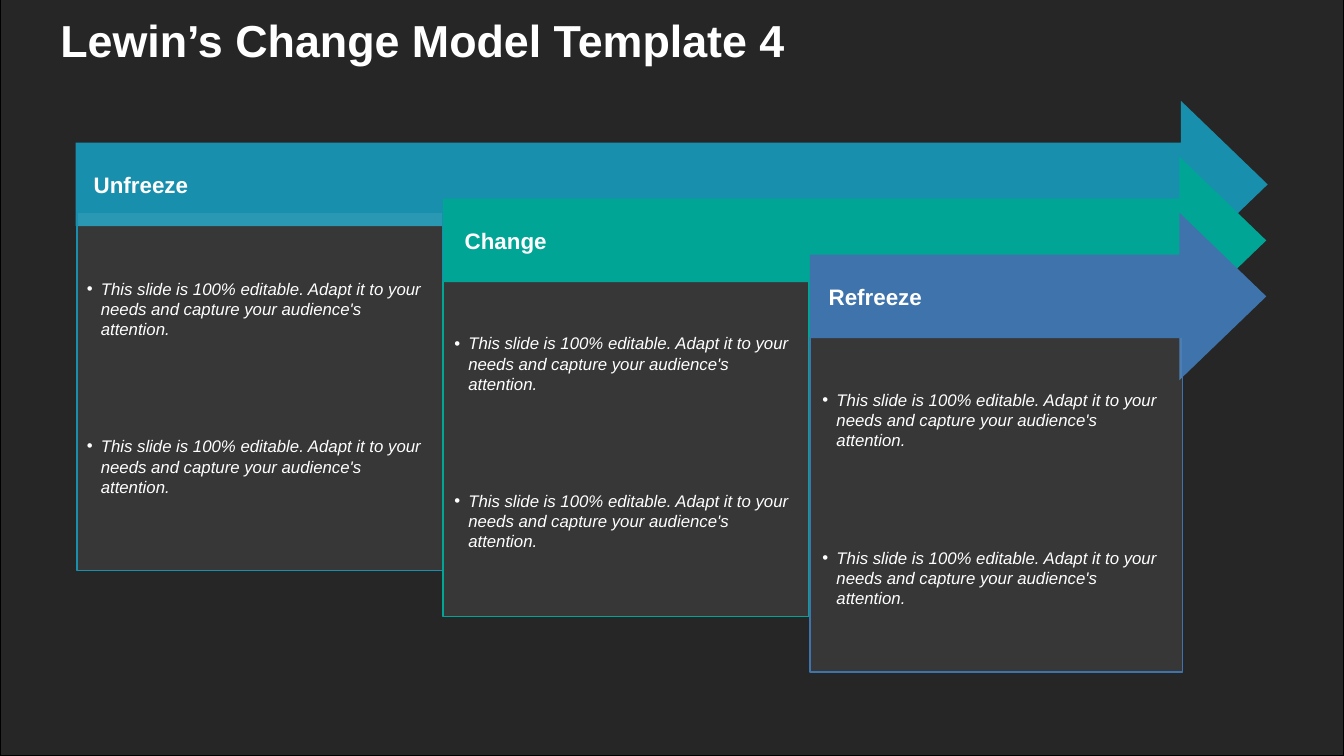
from lxml import etree
from pptx import Presentation
from pptx.dml.color import RGBColor
from pptx.enum import shapes, text
from pptx.oxml import ns
from pptx.util import Pt

COLORS = {"black": "000000", "white": "FFFFFF", "Unfreeze": "1890AD",
          "Change": "01A595", "Refreeze": "3E74AB"}
BULLET_TEXT = ("This slide is 100% editable. Adapt it to your needs "
               "and capture your audience's attention.")
WIDTH, HEIGHT = 960, 540


def add_block(kind, box, fill, opacity=100, line=None, weight=1):
    """Add a preset shape with a fill of the given opacity in percent."""
    sp = s.shapes.add_shape(kind, *map(Pt, box))
    sp.shadow.inherit = False
    sp.fill.solid()
    sp.fill.fore_color.rgb = RGBColor.from_string(COLORS[fill])
    if opacity < 100:
        color = sp.fill._xPr.find(ns.qn("a:solidFill"))[0]
        etree.SubElement(color, ns.qn("a:alpha"), val=str(opacity * 1000))
    if line:
        sp.line.color.rgb = RGBColor.from_string(COLORS[line])
        sp.line.width = Pt(weight)
    else:
        sp.line.fill.background()
    return sp


def add_text(box, words, size, inset, bullet=False):
    """Add white text: a bold heading, or an italic bullet."""
    tf = s.shapes.add_textbox(*map(Pt, box)).text_frame
    tf.word_wrap = True
    tf.margin_left = tf.margin_right = Pt(inset)
    tf.margin_top = tf.margin_bottom = Pt(inset / 2)
    tf.vertical_anchor = text.MSO_ANCHOR.TOP if bullet else text.MSO_ANCHOR.MIDDLE
    tf.text = words
    p = tf.paragraphs[0]
    if bullet:
        pPr = p._p.get_or_add_pPr()
        pPr.set("marL", str(Pt(10)))
        pPr.set("indent", str(Pt(-12.5)))
        bullet_color = etree.SubElement(pPr, ns.qn("a:buClr"))
        etree.SubElement(bullet_color, ns.qn("a:srgbClr"), val=COLORS["white"])
        etree.SubElement(pPr, ns.qn("a:buFont"), typeface="Arial")
        etree.SubElement(pPr, ns.qn("a:buChar"), char="•")
    font = p.runs[0].font
    font.name, font.size = "Arial", Pt(size)
    font.bold, font.italic = not bullet, bullet
    font.color.rgb = RGBColor.from_string(COLORS["white"])


prs = Presentation()
prs.slide_width, prs.slide_height = Pt(WIDTH), Pt(HEIGHT)
s = prs.slides.add_slide(prs.slide_layouts[6])

add_block(shapes.MSO_SHAPE.RECTANGLE, (0, 0, WIDTH, HEIGHT), "black", 85, "black", 0.75)

# stage, arrow left, arrow top, arrow tip, panel box, label left, bullet left, bullet top
stages = [
    ("Unfreeze", 54, 72, 905.5, (55, 152, 261.5, 255.5), 62, 57, 196.5),
    ("Change", 316.5, 112, 904.5, (316.5, 201, 261.5, 239.5), 327, 319.5, 235.5),
    ("Refreeze", 578.5, 152, 904.5, (578.5, 241, 266, 239), 587, 582.5, 276),
]
ARROW_HEIGHT, HEAD_LENGTH, BULLET_STEP = 119.5, 62, 112.5

for stage, left, top, tip, panel, *_ in stages:
    arrow = add_block(shapes.MSO_SHAPE.RIGHT_ARROW,
                      (left, top, tip - left, ARROW_HEIGHT), stage)
    arrow.adjustments[0] = 0.5
    arrow.adjustments[1] = HEAD_LENGTH / ARROW_HEIGHT
    add_block(shapes.MSO_SHAPE.RECTANGLE, panel, "white", 8, stage)

for stage, _, top, _, _, label_left, bullet_left, bullet_top in stages:
    add_text((label_left, top + 45, 128, 29.5), stage, 16, 5)
    for i in range(2):
        add_text((bullet_left, bullet_top + i * BULLET_STEP, 259, 52.5),
                 BULLET_TEXT, 12, 5, bullet=True)

add_text((36, 0, 790, 56), "Lewin’s Change Model Template 4", 32, 7.2)

prs.save("out.pptx")
